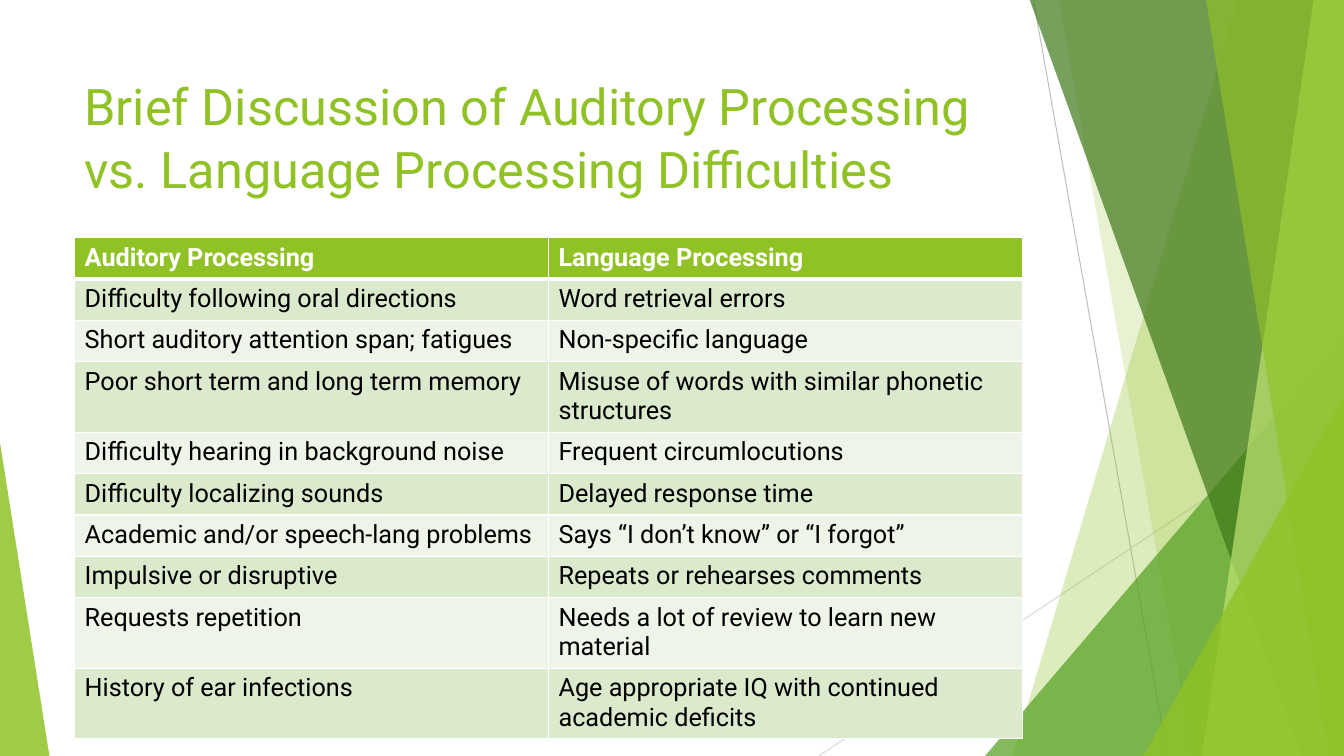
import dataclasses

import lxml.etree
import pptx
import pptx.dml.color
import pptx.enum.shapes
import pptx.enum.text
import pptx.oxml.ns
import pptx.util

Inches = pptx.util.Inches
Pt = pptx.util.Pt
qn = pptx.oxml.ns.qn


@dataclasses.dataclass(frozen=True)
class Theme:
    """Colours, font and type sizes of the slide."""
    lime: str = "90C226"
    leaf: str = "54A021"
    forest: str = "3F7819"
    pale_lime: str = "C0E474"
    band_dark: str = "DBE9CD"
    band_light: str = "EEF4E8"
    white: str = "FFFFFF"
    black: str = "000000"
    line_dark: str = "BFBFBF"
    line_light: str = "D9D9D9"
    font: str = "Roboto"
    title_size: int = 36
    table_size: int = 18


THEME = Theme()
SLIDE_WIDTH, SLIDE_HEIGHT = 13.33, 7.5
TITLE = "Brief Discussion of Auditory Processing vs. Language Processing Difficulties"
DIFFICULTIES = [
    ("Auditory Processing", "Language Processing"),
    ("Difficulty following oral directions", "Word retrieval errors"),
    ("Short auditory attention span; fatigues", "Non-specific language"),
    ("Poor short term and long term memory",
     "Misuse of words with similar phonetic structures"),
    ("Difficulty hearing in background noise", "Frequent circumlocutions"),
    ("Difficulty localizing sounds", "Delayed response time"),
    ("Academic and/or speech-lang problems", "Says “I don’t know” or “I forgot”"),
    ("Impulsive or disruptive", "Repeats or rehearses comments"),
    ("Requests repetition", "Needs a lot of review to learn new material"),
    ("History of ear infections",
     "Age appropriate IQ with continued academic deficits"),
]


def rgb(colour):
    """Turn a hex string into a colour."""
    return pptx.dml.color.RGBColor.from_string(colour)


def style_text(paragraph, size, colour, bold=False):
    """Format every run of a paragraph."""
    for run in paragraph.runs:
        run.font.name = THEME.font
        run.font.size = Pt(size)
        run.font.bold = bold
        run.font.color.rgb = rgb(colour)


def tint(shape, colour, opacity):
    """Give a shape a see-through fill without outline or shadow."""
    shape.shadow.inherit = False
    shape.line.fill.background()
    shape.fill.solid()
    shape.fill.fore_color.rgb = rgb(colour)
    fill_colour = shape.fill._xPr.find(qn("a:solidFill"))[0]
    lxml.etree.SubElement(fill_colour, qn("a:alpha"), val=str(opacity * 1000))


def add_ray(slide, start, end, colour):
    """Draw one thin line."""
    ends = [Inches(length) for length in (*start, *end)]
    ray = slide.shapes.add_connector(pptx.enum.shapes.MSO_CONNECTOR.STRAIGHT, *ends)
    ray.line.color.rgb = rgb(colour)
    ray.line.width = Pt(0.75)
    lxml.etree.SubElement(ray._element.spPr, qn("a:effectLst"))


def add_blade(slide, box, top_inset, bottom_inset, colour, opacity):
    """Draw a facet between a slanted left side and the box's right side."""
    left, top, width, height = box
    right, bottom = left + width, top + height
    corners = [(left + top_inset, top), (right, top),
               (right, bottom), (left + bottom_inset, bottom)]
    points = [(Inches(x), Inches(y)) for x, y in corners]
    builder = slide.shapes.build_freeform(*points[0])
    builder.add_line_segments(points[1:], close=True)
    tint(builder.convert_to_shape(), colour, opacity)


def add_wedge(slide, box, apex, colour, opacity):
    """Draw a triangle with its apex at a fraction of the box's width."""
    wedge = slide.shapes.add_shape(
        pptx.enum.shapes.MSO_SHAPE.ISOSCELES_TRIANGLE, *map(Inches, box))
    wedge.adjustments[0] = apex
    tint(wedge, colour, opacity)


def add_corner_wedge(slide, box, width, height, colour, opacity):
    """Draw a triangle in the bottom right corner of the box."""
    left = box[0] + box[2] - width
    top = box[1] + box[3] - height
    add_wedge(slide, (left, top, width, height), 1, colour, opacity)


def add_facets(slide, box):
    """Draw the layered facets along the right side."""
    left, top, width, height = box
    right, bottom = left + width, top + height
    add_ray(slide, (left + 0.48, 0), (left + 1.81, bottom), THEME.line_dark)
    add_ray(slide, (right, 4.03), (left - 1.65, bottom), THEME.line_light)
    add_blade(slide, box, 2.51, 0.27, THEME.lime, 30)
    add_blade(slide, box, 0.73, 2.06, THEME.lime, 20)
    add_corner_wedge(slide, box, width, 4.17, THEME.leaf, 72)
    add_blade(slide, box, 0.44, 3.14, THEME.forest, 70)
    add_blade(slide, box, 3.26, 2.15, THEME.pale_lime, 70)
    add_blade(slide, box, 2.19, 3.41, THEME.lime, 65)
    add_corner_wedge(slide, box, 1.99, 3.57, THEME.lime, 80)


def add_title(slide, box):
    """Write the slide title."""
    frame = slide.shapes.add_textbox(*map(Inches, box)).text_frame
    frame.word_wrap = True
    frame.vertical_anchor = pptx.enum.text.MSO_ANCHOR.TOP
    frame.text = TITLE
    frame.paragraphs[0].line_spacing = 1.04
    style_text(frame.paragraphs[0], THEME.title_size, THEME.lime)


def add_borders(cell, bottom_width):
    """Give a cell white borders."""
    properties = cell._tc.get_or_add_tcPr()
    widths = {"a:lnL": 1, "a:lnR": 1, "a:lnT": 1, "a:lnB": bottom_width}
    for side, width in widths.items():
        border = lxml.etree.SubElement(properties, qn(side), w=str(Pt(width)))
        fill = lxml.etree.SubElement(border, qn("a:solidFill"))
        lxml.etree.SubElement(fill, qn("a:srgbClr"), val=THEME.white)


def add_comparison(slide, box):
    """Build the table that compares both kinds of difficulty."""
    comparison = slide.shapes.add_table(
        len(DIFFICULTIES), len(DIFFICULTIES[0]), *map(Inches, box)).table
    comparison.horz_banding = False
    for number, difficulties in enumerate(DIFFICULTIES):
        header = number == 0
        comparison.rows[number].height = Inches(0.41)
        band = THEME.band_dark if number % 2 else THEME.band_light
        for column, difficulty in enumerate(difficulties):
            cell = comparison.cell(number, column)
            cell.text_frame.text = difficulty
            style_text(cell.text_frame.paragraphs[0], THEME.table_size,
                       THEME.white if header else THEME.black, header)
            add_borders(cell, 3 if header else 1)
            cell.fill.solid()
            cell.fill.fore_color.rgb = rgb(THEME.lime if header else band)


def main():
    """Build and save the slide."""
    deck = pptx.Presentation()
    deck.slide_width = Inches(SLIDE_WIDTH)
    deck.slide_height = Inches(SLIDE_HEIGHT)
    slide = deck.slides.add_slide(deck.slide_layouts[6])
    add_facets(slide, (9.77, -0.01, 3.56, 7.51))
    add_wedge(slide, (0, 4.39, 0.49, 3.11), 0, THEME.lime, 85)
    add_title(slide, (0.74, 0.67, 9.4, 1.44))
    add_comparison(slide, (0.74, 2.36, 9.4, 4.94))
    deck.save("out.pptx")


if __name__ == "__main__":
    main()
